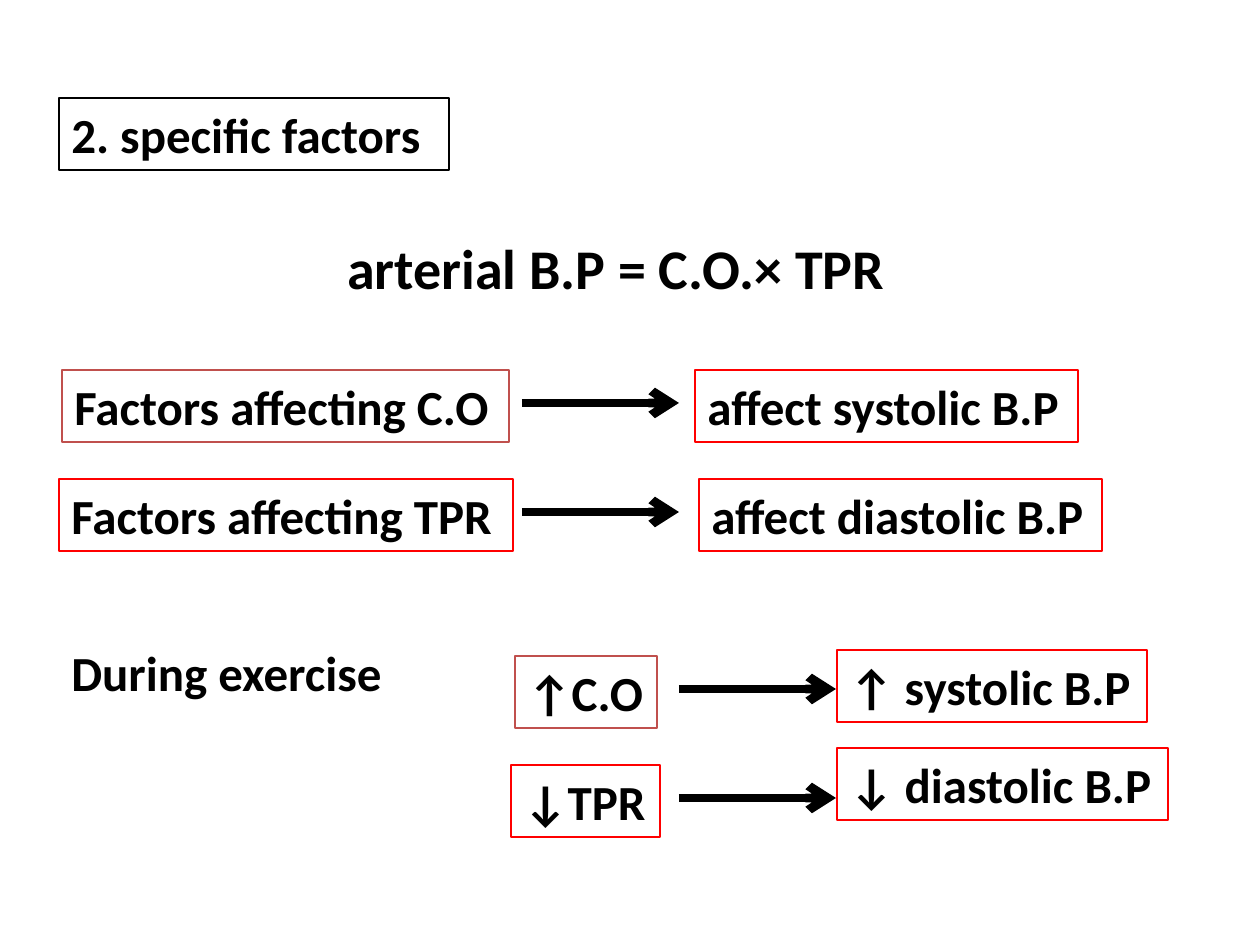
from typing import NamedTuple, Optional

from lxml.etree import SubElement
from pptx import Presentation
from pptx.dml.color import RGBColor
from pptx.enum.shapes import MSO_CONNECTOR, MSO_SHAPE
from pptx.enum.text import MSO_ANCHOR, PP_ALIGN
from pptx.oxml.ns import qn
from pptx.util import Emu, Pt

PX = 914400 // 126
FONT = "Calibri"
INK = {"black": "000000", "red": "FF0000", "brick": "C0504D"}


class Label(NamedTuple):
    text: str
    left: int
    top: int
    width: int
    edge: Optional[str] = None
    height: int = 72
    size: int = 28


class Arrow(NamedTuple):
    left: int
    y: int
    length: int = 157


LABELS = [
    Label("2. specific factors", 59, 98, 390, "black"),
    Label("arterial B.P = C.O.× TPR", 335, 227, 568, height=81, size=32),
    Label("Factors affecting C.O", 62, 370, 447, "brick"),
    Label("Factors affecting TPR", 59, 479, 454, "red"),
    Label("affect systolic B.P", 695, 370, 383, "red"),
    Label("affect diastolic B.P", 699, 479, 403, "red"),
    Label("During exercise", 59, 636, 339),
    Label("↑C.O", 515, 656, 142, "brick"),
    Label("↓TPR", 511, 765, 149, "red"),
    Label("↑ systolic B.P", 837, 650, 310, "red"),
    Label("↓ diastolic B.P", 837, 748, 331, "red"),
]
ARROWS = [Arrow(522, 403), Arrow(522, 512), Arrow(679, 689), Arrow(679, 798)]


def px(count: int) -> Emu:
    return Emu(count * PX)


def color(name: str) -> RGBColor:
    return RGBColor.from_string(INK[name])


def add_label(shapes, label: Label) -> None:
    """Draw a framed rectangle, or a plain text box when there is no edge."""
    area = [px(n) for n in (label.left, label.top, label.width, label.height)]
    if label.edge:
        box = shapes.add_shape(MSO_SHAPE.RECTANGLE, *area)
        box.shadow.inherit = False
        box.fill.background()
        box.line.color.rgb = color(label.edge)
        box.line.width = Pt(0.75)
    else:
        box = shapes.add_textbox(*area)
    frame = box.text_frame
    frame.word_wrap = True
    frame.vertical_anchor = MSO_ANCHOR.TOP
    para = frame.paragraphs[0]
    para.alignment = PP_ALIGN.LEFT
    run = para.add_run()
    run.text = label.text
    run.font.name = FONT
    run.font.size = Pt(label.size)
    run.font.bold = True
    run.font.color.rgb = color("black")


def add_arrow(shapes, arrow: Arrow) -> None:
    y = px(arrow.y)
    line = shapes.add_connector(
        MSO_CONNECTOR.STRAIGHT, px(arrow.left), y, px(arrow.left + arrow.length), y
    )
    line.line.color.rgb = color("black")
    line.line.width = Pt(5)
    SubElement(line.line._get_or_add_ln(), qn("a:tailEnd"), type="arrow")
    SubElement(line._element.spPr, qn("a:effectLst"))


def main() -> None:
    deck = Presentation()
    deck.slide_width, deck.slide_height = px(1260), px(945)
    shapes = deck.slides.add_slide(deck.slide_layouts[6]).shapes
    for label in LABELS:
        add_label(shapes, label)
    for arrow in ARROWS:
        add_arrow(shapes, arrow)
    deck.save("out.pptx")


if __name__ == "__main__":
    main()
